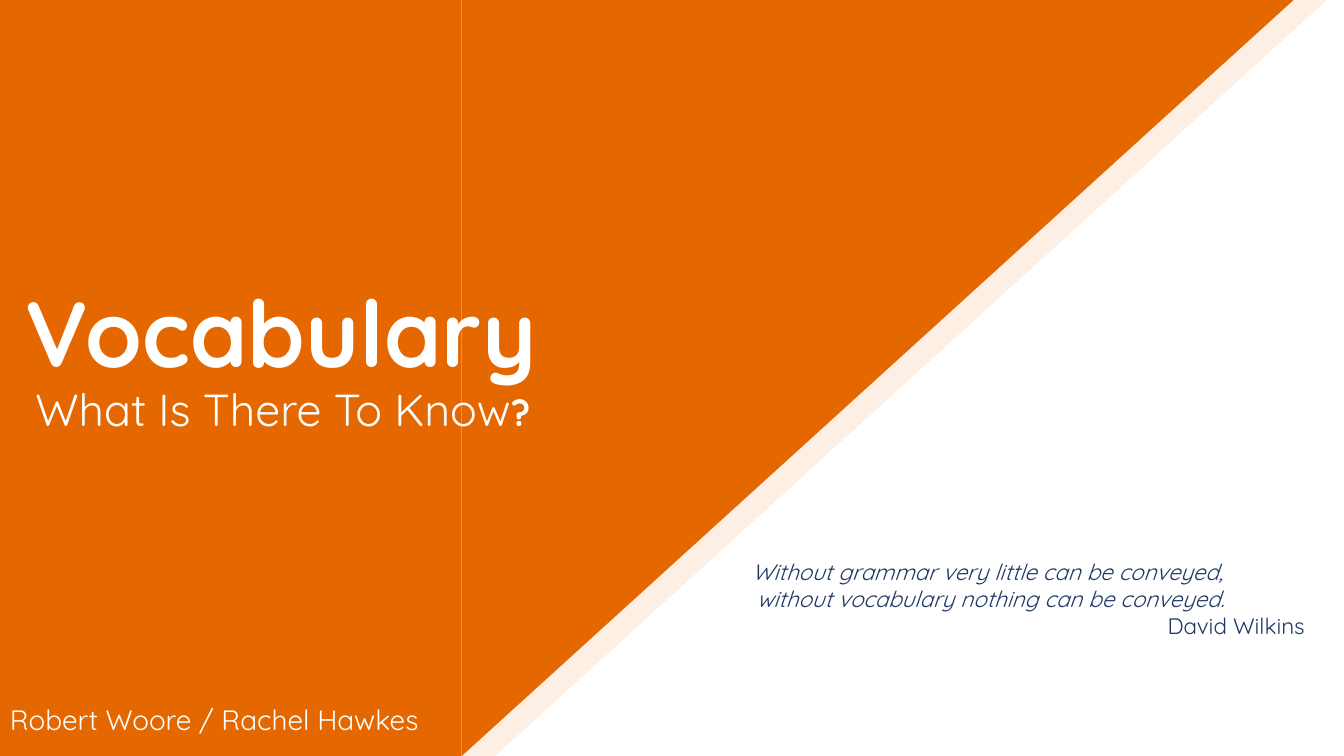
from dataclasses import dataclass

from pptx import Presentation
from pptx.dml.color import RGBColor
from pptx.enum.shapes import MSO_SHAPE
from pptx.enum.text import MSO_ANCHOR, MSO_AUTO_SIZE, PP_ALIGN
from pptx.util import Inches, Pt

RECT = MSO_SHAPE.RECTANGLE
WEDGE = MSO_SHAPE.ISOSCELES_TRIANGLE
TOP, MIDDLE = MSO_ANCHOR.TOP, MSO_ANCHOR.MIDDLE
LEFT, CENTER, RIGHT = PP_ALIGN.LEFT, PP_ALIGN.CENTER, PP_ALIGN.RIGHT
FIXED = MSO_AUTO_SIZE.NONE

WIDTH, HEIGHT = 13.33, 7.5
SLOPE = 8.25


@dataclass(frozen=True)
class Theme:
    font: str = "Quicksand"
    orange: str = "E56700"
    cream: str = "FDEFE3"
    white: str = "FFFFFF"
    navy: str = "203864"
    title: int = 66
    sub: int = 32
    mark: int = 26
    names: int = 20
    quote: int = 16


THEME = Theme()


def paint(shape, color):
    shape.shadow.inherit = False
    shape.fill.solid()
    shape.fill.fore_color.rgb = RGBColor.from_string(color)
    shape.line.fill.background()


def add_band(slide, edge, color):
    shift = (SLOPE - HEIGHT) / 2
    wedge = slide.shapes.add_shape(
        WEDGE, Inches(edge + shift), Inches(-shift), Inches(HEIGHT), Inches(SLOPE)
    )
    wedge.adjustments[0] = 0
    wedge.rotation = 90
    block = slide.shapes.add_shape(RECT, 0, 0, Inches(edge), Inches(HEIGHT))
    for part in (wedge, block):
        paint(part, color)


def place(shape, left, top, width, height):
    shape.left, shape.top = Inches(left), Inches(top)
    shape.width, shape.height = Inches(width), Inches(height)
    shape.element.getparent().append(shape.element)


def set_run(run, size, color, bold=False, italic=False):
    font = run.font
    font.name, font.size = THEME.font, Pt(size)
    font.color.rgb = RGBColor.from_string(color)
    font.bold, font.italic = bold, italic


def set_text(shape, text, size, color, anchor=TOP, bold=False, italic=False):
    frame = shape.text_frame
    frame.text = text
    frame.word_wrap = True
    frame.auto_size = FIXED
    frame.vertical_anchor = anchor
    for line in frame.paragraphs:
        line.alignment = LEFT
        line.space_before = Pt(0)
        for run in line.runs:
            set_run(run, size, color, bold, italic)
    return frame


def add_box(slide, left, top, width, height):
    return slide.shapes.add_textbox(
        Inches(left), Inches(top), Inches(width), Inches(height)
    )


def add_heads(slide):
    title, sub = slide.placeholders
    place(title, 0.15, 2.68, 8.86, 1.21)
    set_text(title, "Vocabulary", THEME.title, THEME.white, bold=True)
    place(sub, 0.25, 3.62, 7.2, 0.93)
    frame = set_text(sub, "What Is There To Know", THEME.sub, THEME.white, MIDDLE)
    line = frame.paragraphs[0]
    line.line_spacing = 0.9
    mark = line.add_run()
    mark.text = "?"
    set_run(mark, THEME.mark, THEME.white, bold=True)


def add_quote(slide):
    text = (
        "Without grammar very little can be conveyed, \n"
        "without vocabulary nothing can be conveyed.\n"
        "David Wilkins "
    )
    box = add_box(slide, 6.43, 5.49, 6.67, 0.94)
    frame = set_text(box, text, THEME.quote, THEME.navy, italic=True)
    for line in frame.paragraphs:
        line.alignment = CENTER
        line._p.get_or_add_pPr().set("marL", str(Inches(0.12)))
    source = frame.paragraphs[-1]
    source.alignment = RIGHT
    source.runs[0].font.italic = False


def main():
    deck = Presentation()
    deck.slide_width, deck.slide_height = Inches(WIDTH), Inches(HEIGHT)
    slide = deck.slides.add_slide(deck.slide_layouts[0])
    add_band(slide, 4.91, THEME.cream)
    add_band(slide, 4.58, THEME.orange)
    add_heads(slide)
    add_quote(slide)
    names = add_box(slide, 0, 6.92, 4.45, 0.44)
    set_text(names, "Robert Woore / Rachel Hawkes", THEME.names, THEME.white)
    deck.save("out.pptx")


if __name__ == "__main__":
    main()
